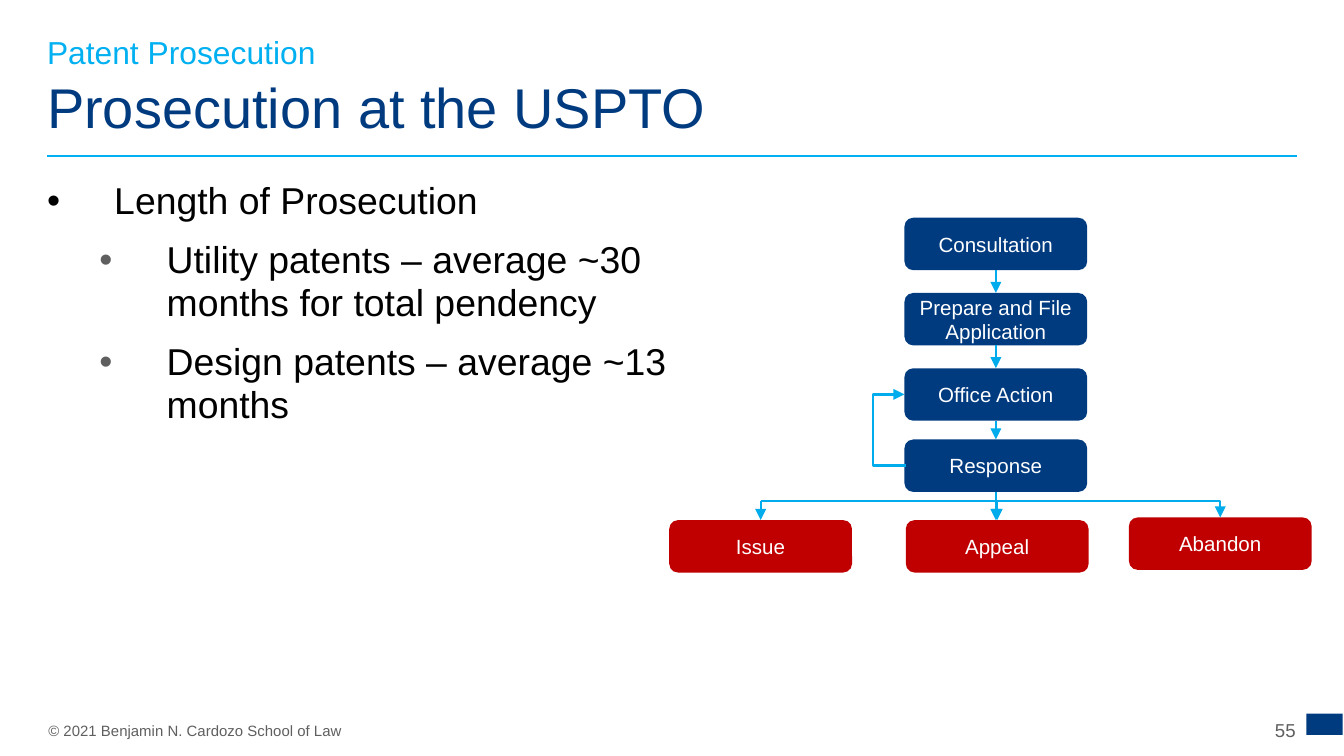
"""Build the slide on the length and steps of patent prosecution."""
from pptx import Presentation, util as u
from pptx.dml.color import RGBColor
from pptx.enum import shapes as kinds, text as t
from pptx.oxml.ns import qn
from lxml import etree

COLORS = {"navy": "003B80", "sky": "00B0F0", "arrow": "00ACEB", "red": "C00000",
          "gray": "5F5F5F", "black": "000000", "white": "FFFFFF"}
FONT = "Arial"
SLIDE_W = 10
SLIDE_H = SLIDE_W * 9 / 16
MARGIN, WIDTH = 0.35, 9.29
BOX_W, BOX_H = 1.36, 0.39
SPINE, BRANCH_Y, LOOP_X = 7.41, 3.73, 6.49

HEADINGS = [
    ("Patent Prosecution", (MARGIN, 0.31, WIDTH, 0.24), 17, "sky", "TOP", "LEFT", 0.75),
    ("Prosecution at the USPTO", (MARGIN, 0.43, WIDTH, 0.61), 30, "navy", "BOTTOM", "LEFT", 0.85),
    ("© 2021 Benjamin N. Cardozo School of Law", (0.36, 5.37, 8.57, 0.13), 8, "gray", "TOP", "LEFT", 1.0),
    ("55", (9.1, 5.35, 0.54, 0.16), 10, "gray", "MIDDLE", "RIGHT", 1.0),
]
POINTS = [
    (0, "Length of Prosecution"),
    (1, "Utility patents – average ~30 months for total pendency"),
    (1, "Design patents – average ~13 months"),
]
LEVELS = [{"indent": 0.5, "bullet": "black", "before": 0},
          {"indent": 0.89, "bullet": "gray", "before": 3}]
STEPS = [("Consultation", 1.62), ("Prepare and File Application", 2.18),
         ("Office Action", 2.74), ("Response", 3.27)]
OUTCOMES = [("Issue", 4.98, 3.87), ("Appeal", 6.74, 3.87), ("Abandon", 8.4, 3.85)]

deck = Presentation()
deck.slide_width, deck.slide_height = u.Inches(SLIDE_W), u.Inches(SLIDE_H)
slide = deck.slides.add_slide(deck.slide_layouts[6])


def color(name):
    return RGBColor.from_string(COLORS[name])


def style(paragraph, size, name):
    font = paragraph.font
    font.name, font.size = FONT, u.Pt(size)
    font.color.rgb = color(name)


def set_frame(frame, inset, anchor):
    frame.word_wrap = True
    frame.margin_left = frame.margin_right = u.Inches(inset)
    frame.margin_top = frame.margin_bottom = u.Inches(inset)
    frame.vertical_anchor = t.MSO_ANCHOR[anchor]
    return frame


def add_text(place, anchor="TOP"):
    return set_frame(slide.shapes.add_textbox(*map(u.Inches, place)).text_frame, 0, anchor)


def add_block(kind, place, fill):
    block = slide.shapes.add_shape(kinds.MSO_SHAPE[kind], *map(u.Inches, place))
    block.shadow.inherit = False
    block.fill.solid()
    block.fill.fore_color.rgb = color(fill)
    block.line.fill.background()
    return block


def add_box(label, left, top, fill):
    box = add_block("ROUNDED_RECTANGLE", (left, top, BOX_W, BOX_H), fill)
    paragraph = set_frame(box.text_frame, 0.08, "MIDDLE").paragraphs[0]
    paragraph.text = label
    paragraph.alignment = t.PP_ALIGN.CENTER
    style(paragraph, 11, "white")


def add_line(start, end, name="arrow", width=1.25, arrow=True, bend=None, adjust=None):
    kind = kinds.MSO_CONNECTOR.ELBOW if bend else kinds.MSO_CONNECTOR.STRAIGHT
    line = slide.shapes.add_connector(kind, *map(u.Inches, (*start, *end)))
    line.line.color.rgb = color(name)
    line.line.width = u.Pt(width)
    properties = line._element.spPr
    if arrow:
        etree.SubElement(properties.find(qn("a:ln")), qn("a:tailEnd"), type="triangle")
    etree.SubElement(properties, qn("a:effectLst"))
    if bend:
        geometry = properties.find(qn("a:prstGeom"))
        geometry.set("prst", bend)
        if adjust:
            guides = geometry.find(qn("a:avLst"))
            etree.SubElement(guides, qn("a:gd"), name="adj1", fmla=f"val {adjust}")


def add_bullet(paragraph, indent, name):
    properties = paragraph._p.get_or_add_pPr()
    properties.set("marL", str(u.Inches(indent)))
    properties.set("indent", str(u.Inches(-0.5)))
    tint = etree.SubElement(properties, qn("a:buClr"))
    etree.SubElement(tint, qn("a:srgbClr"), val=COLORS[name])
    etree.SubElement(properties, qn("a:buFont"), typeface=FONT)
    etree.SubElement(properties, qn("a:buChar"), char="•")


add_block("RECTANGLE", (9.72, 5.31, 0.27, 0.16), "navy")
add_line((9.65, 1.16), (MARGIN, 1.16), "sky", 1, arrow=False)

for wording, place, size, name, anchor, align, spacing in HEADINGS:
    heading = add_text(place, anchor).paragraphs[0]
    heading.text = wording
    heading.alignment = t.PP_ALIGN[align]
    heading.line_spacing = spacing
    style(heading, size, name)

body = add_text((MARGIN, 1.34, 4.72, 3.72))
for index, (level, wording) in enumerate(POINTS):
    point = body.add_paragraph() if index else body.paragraphs[0]
    look = LEVELS[level]
    point.text, point.level = wording, level
    add_bullet(point, look["indent"], look["bullet"])
    point.line_spacing = 0.95
    point.space_before, point.space_after = u.Pt(look["before"]), u.Pt(6)
    style(point, 20, "black")

step_left = SPINE - BOX_W / 2
for label, top in STEPS:
    add_box(label, step_left, top, "navy")
for label, left, top in OUTCOMES:
    add_box(label, left, top, "red")

tops = [top for _, top in STEPS] + [OUTCOMES[1][2]]
for upper, lower in zip(tops, tops[1:]):
    add_line((SPINE, upper + BOX_H), (SPINE, lower))

(issue_x, issue_y), (appeal_x, appeal_y), (abandon_x, abandon_y) = [
    (left + BOX_W / 2, top) for _, left, top in OUTCOMES]
add_line((issue_x, BRANCH_Y), (issue_x, issue_y))
add_line((issue_x, BRANCH_Y), (appeal_x, appeal_y), bend="bentConnector2")
add_line((SPINE, BRANCH_Y), (abandon_x, abandon_y), bend="bentConnector2")

response_y, action_y = [top + BOX_H / 2 for top in (tops[3], tops[2])]
loop_start = step_left + 0.01
add_line((loop_start, response_y), (step_left, action_y), bend="bentConnector3",
         adjust=round((loop_start - LOOP_X) / 0.01 * 100000))

deck.save("out.pptx")
